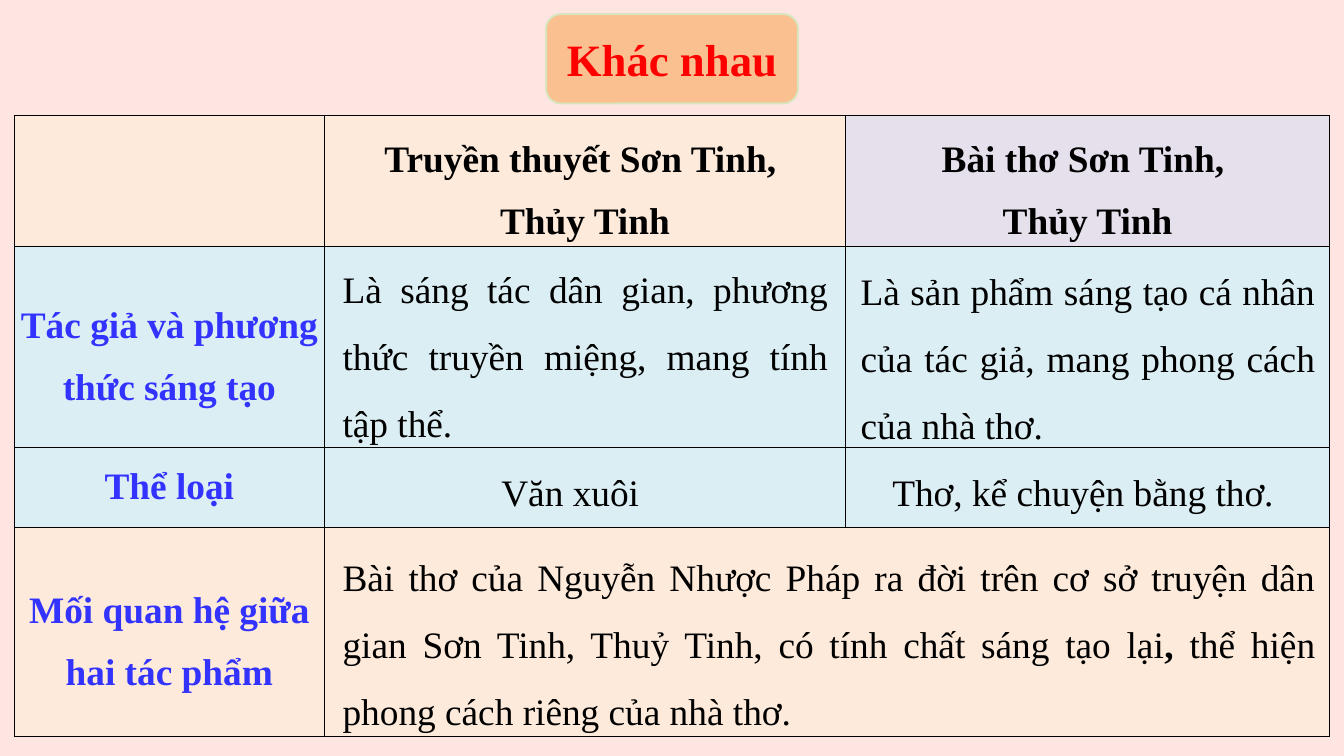
"""Build a slide comparing a legend and a poem in a four-row table."""
from dataclasses import dataclass
from itertools import product

from lxml import etree
from pptx import Presentation
from pptx import util as u
from pptx.dml.color import RGBColor
from pptx.enum import shapes, text
from pptx.oxml.ns import qn


@dataclass(frozen=True)
class Theme:
    font: str = "Times New Roman"
    title_size: int = 48
    body_size: int = 40
    background: str = "FEE5E1"
    title_fill: str = "FAC090"
    title_line: str = "D7E4BD"
    title_text: str = "FF0000"
    ink: str = "000000"
    label: str = "3333FF"
    peach: str = "FDEADA"
    lilac: str = "E6E0EC"
    blue: str = "DBEEF4"


THEME = Theme()
CENTER, JUSTIFY = text.PP_ALIGN.CENTER, text.PP_ALIGN.JUSTIFY
WIDTH, HEIGHT = 20, 11.25
TITLE = "Khác nhau"
TITLE_WIDTH, TITLE_HEIGHT, TITLE_TOP = 3.75, 1.33, 0.21
TABLE_LEFT, TABLE_TOP = 0.21, 1.72
COLUMNS = [4.62, 7.75, 7.21]
ROWS = [1.89, 2.99, 1.19, 3.12]
FILLS = [
    [THEME.peach, THEME.peach, THEME.lilac],
    [THEME.blue] * 3,
    [THEME.blue] * 3,
    [THEME.peach] * 3,
]
HEADINGS = [
    (0, 1, ["Truyền thuyết Sơn Tinh, ", "Thủy Tinh"], THEME.ink, 1.5),
    (0, 2, ["Bài thơ Sơn Tinh, ", "Thủy Tinh"], THEME.ink, 1.5),
    (1, 0, ["Tác giả và phương thức sáng tạo"], THEME.label, 1.5),
    (2, 0, ["Thể loại"], THEME.label, 1),
    (3, 0, ["Mối quan hệ giữa hai tác phẩm"], THEME.label, 1.5),
]
LONG = dict(align=JUSTIFY, spacing=1.5, wrap=True)
SHORT = dict(align=CENTER, spacing=1, wrap=False)
ANSWERS = [
    dict(row=1, column=1, inset=(0.17, -0.03), size=(7.42, 3.02), style=LONG, pieces=[
        ("Là sáng tác dân gian, phương thức truyền miệng, mang tính tập thể.", False)]),
    dict(row=1, column=2, inset=(0.13, 0), size=(6.96, 3.02), style=LONG, pieces=[
        ("Là sản phẩm sáng tạo cá nhân của tác giả, mang phong cách của nhà thơ. ", False)]),
    dict(row=2, column=1, inset=(2.52, 0.34), size=(2.27, 0.77), style=SHORT, pieces=[
        ("Văn xuôi", False)]),
    dict(row=2, column=2, inset=(0.57, 0.34), size=(6.07, 0.77), style=SHORT, pieces=[
        ("Thơ, kể chuyện bằng thơ. ", False)]),
    dict(row=3, column=1, inset=(0.17, 0.07), size=(14.67, 3.01), style=LONG, pieces=[
        ("Bài thơ của Nguyễn Nhược Pháp ra đời trên cơ sở truyện dân gian Sơn Tinh, "
         "Thuỷ Tinh, có tính chất sáng tạo lại", False),
        (", ", True),
        ("thể hiện phong cách riêng của nhà thơ.", False)]),
]


def paint(fill, color):
    fill.solid()
    fill.fore_color.rgb = RGBColor.from_string(color)


def write(paragraph, pieces, size, color, align, spacing):
    paragraph.alignment = align
    paragraph.line_spacing = float(spacing)
    for words, bold in pieces:
        run = paragraph.add_run()
        run.text = words
        run.font.name = THEME.font
        run.font.size = u.Pt(size)
        run.font.bold = bold
        run.font.color.rgb = RGBColor.from_string(color)


def add_title(slide):
    place = [u.Inches(length) for length in (
        (WIDTH - TITLE_WIDTH) / 2, TITLE_TOP, TITLE_WIDTH, TITLE_HEIGHT)]
    plate = slide.shapes.add_shape(shapes.MSO_SHAPE.ROUNDED_RECTANGLE, *place)
    plate.shadow.inherit = False
    paint(plate.fill, THEME.title_fill)
    plate.line.color.rgb = RGBColor.from_string(THEME.title_line)
    plate.line.width = u.Pt(2)
    title = slide.shapes.title
    title.left, title.top, title.width, title.height = place
    plate.element.addnext(title.element)
    frame = title.text_frame
    frame.auto_size = text.MSO_AUTO_SIZE.NONE
    frame.vertical_anchor = text.MSO_ANCHOR.MIDDLE
    write(frame.paragraphs[0], [(TITLE, True)], THEME.title_size, THEME.title_text, CENTER, 1)


def add_borders(cell):
    properties = cell._tc.get_or_add_tcPr()
    for side in ("lnL", "lnR", "lnT", "lnB"):
        line = etree.SubElement(properties, qn(f"a:{side}"), w=str(u.Pt(1)))
        solid = etree.SubElement(line, qn("a:solidFill"))
        etree.SubElement(solid, qn("a:srgbClr"), val=THEME.ink)


def add_table(slide):
    table = slide.shapes.add_table(
        len(ROWS), len(COLUMNS), u.Inches(TABLE_LEFT), u.Inches(TABLE_TOP),
        u.Inches(sum(COLUMNS)), u.Inches(sum(ROWS))).table
    table.first_row = table.horz_banding = False
    for column, width in zip(table.columns, COLUMNS):
        column.width = u.Inches(width)
    for row, height in zip(table.rows, ROWS):
        row.height = u.Inches(height)
    for row, column in product(range(len(ROWS)), range(len(COLUMNS))):
        cell = table.cell(row, column)
        cell.margin_left = cell.margin_right = u.Inches(0.08)
        cell.vertical_anchor = text.MSO_ANCHOR.MIDDLE
        add_borders(cell)
        paint(cell.fill, FILLS[row][column])
    table.cell(3, 1).merge(table.cell(3, 2))
    for row, column, lines, color, spacing in HEADINGS:
        frame = table.cell(row, column).text_frame
        for index, words in enumerate(lines):
            paragraph = frame.add_paragraph() if index else frame.paragraphs[0]
            write(paragraph, [(words, True)], THEME.body_size, color, CENTER, spacing)


def add_answer(slide, row, column, inset, size, style, pieces):
    left = TABLE_LEFT + sum(COLUMNS[:column]) + inset[0]
    top = TABLE_TOP + sum(ROWS[:row]) + inset[1]
    box = slide.shapes.add_textbox(*map(u.Inches, (left, top, *size)))
    frame = box.text_frame
    frame.word_wrap = style["wrap"]
    frame.auto_size = text.MSO_AUTO_SIZE.SHAPE_TO_FIT_TEXT
    write(frame.paragraphs[0], pieces, THEME.body_size, THEME.ink,
          style["align"], style["spacing"])


def main():
    presentation = Presentation()
    presentation.slide_width, presentation.slide_height = u.Inches(WIDTH), u.Inches(HEIGHT)
    slide = presentation.slides.add_slide(presentation.slide_layouts[5])
    paint(slide.background.fill, THEME.background)
    add_title(slide)
    add_table(slide)
    for answer in ANSWERS:
        add_answer(slide, **answer)
    presentation.save("out.pptx")


if __name__ == "__main__":
    main()
